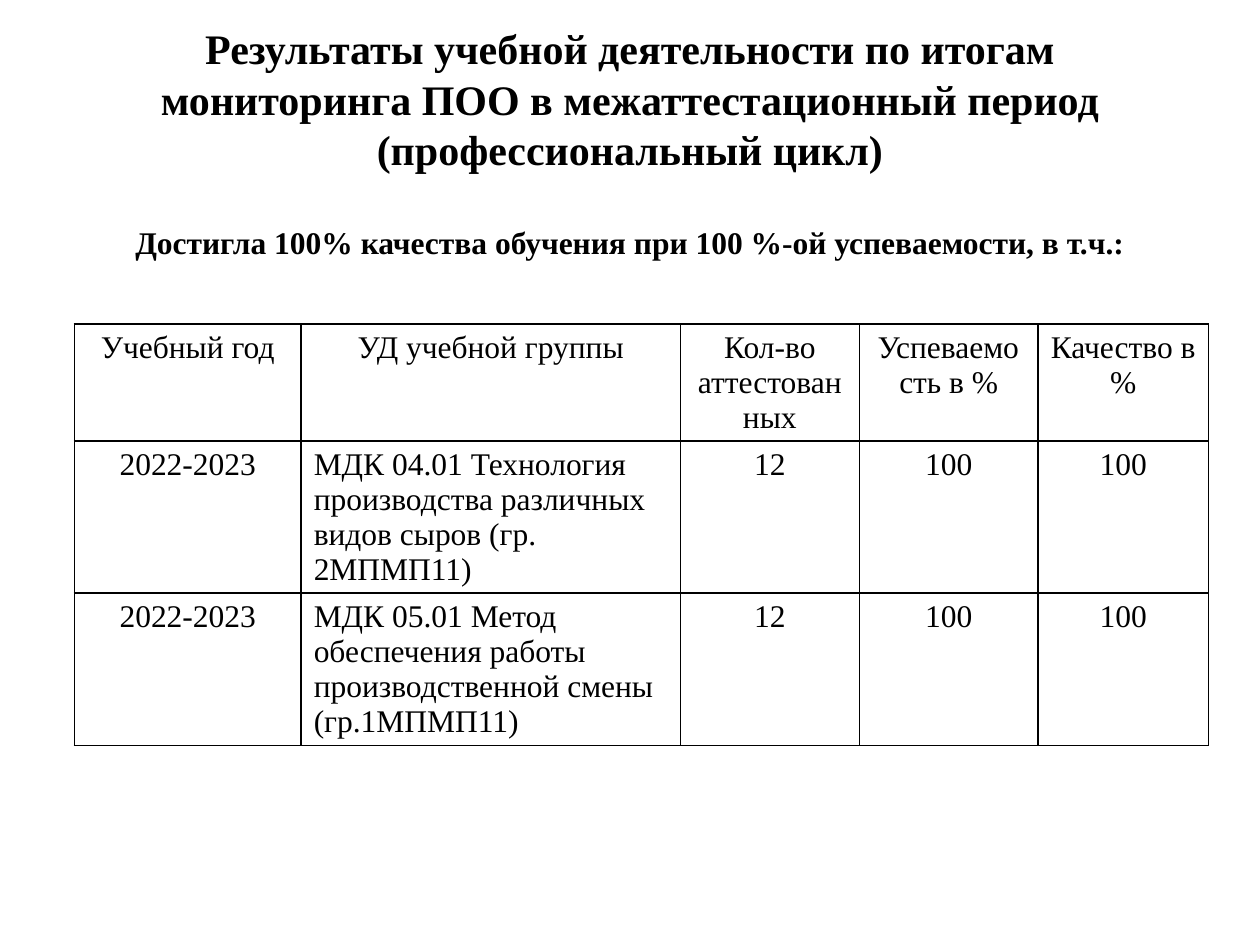
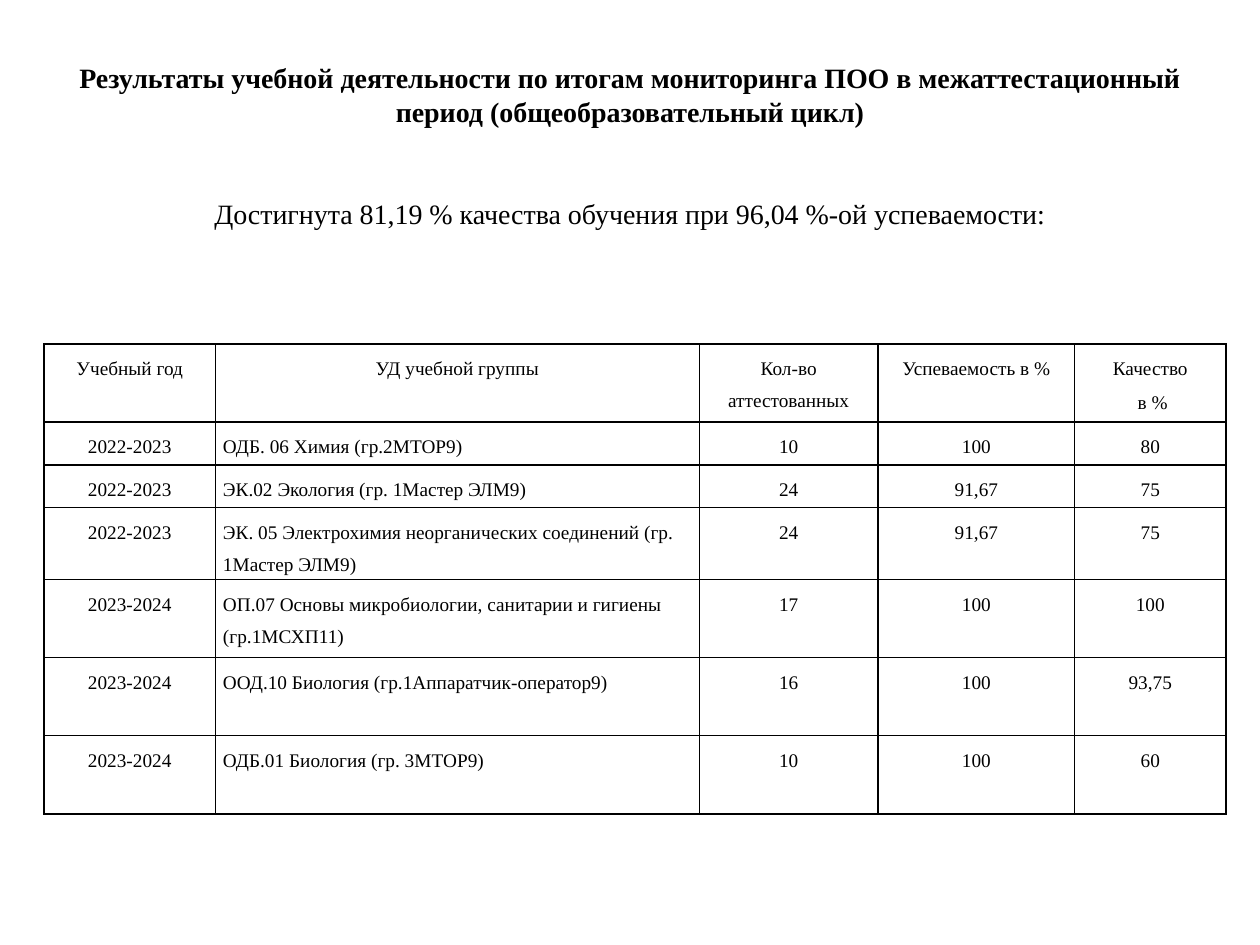
"""Builds two slides of study results, each with a title and a bordered table."""
import pptx
import pptx.dml.color
import pptx.enum.text
import pptx.oxml
import pptx.oxml.ns
import pptx.util

Inches, Pt = pptx.util.Inches, pptx.util.Pt
ALIGN = pptx.enum.text.PP_ALIGN
BLACK = pptx.dml.color.RGBColor(0, 0, 0)
FONT = "Times New Roman"
TITLE = "Результаты учебной деятельности по итогам мониторинга ПОО в межаттестационный период "
SUBJECT_COL = 1

SLIDES = [
    {
        "cycle": "(профессиональный цикл)",
        "summary": "Достигла 100% качества обучения при 100 %-ой успеваемости, в т.ч.:",
        "title_box": (0.5, 0, 9, 2.25),
        "title_size": 24, "summary_size": 18, "summary_bold": True, "gap": 28,
        "table_at": (0.59, 2.57),
        "cols": [1.8, 3.01, 1.42, 1.42, 1.35],
        "heights": [0.92, 1.2, 1.2],
        "insets": (0.1, 0.05),
        "cell_format": {"size": 18},
        "rows": [
            ("Учебный год", "УД учебной группы", "Кол-во аттестованных", "Успеваемость в %", "Качество в %"),
            ("2022-2023", "МДК 04.01 Технология производства различных видов сыров (гр. 2МПМП11)", "12", "100", "100"),
            ("2022-2023", "МДК 05.01 Метод обеспечения работы производственной смены (гр.1МПМП11)", "12", "100", "100"),
        ],
    },
    {
        "cycle": "(общеобразовательный цикл)",
        "summary": "Достигнута 81,19 % качества обучения при 96,04 %-ой успеваемости:",
        "title_box": (0.5, 0.13, 9, 2.05),
        "title_size": 16, "summary_size": 16, "summary_bold": False, "gap": 39,
        "table_at": (0.35, 2.73),
        "cols": [1.36, 3.84, 1.42, 1.56, 1.2],
        "heights": [0.62, 0.34, 0.34, 0.57, 0.62, 0.62, 0.62],
        "insets": (0.06, 0.03),
        "cell_format": {"size": 11, "spacing": 1.5, "before": 1.2},
        "rows": [
            ("Учебный год", "УД учебной группы", "Кол-во аттестованных", "Успеваемость в %", "Качество\n в %"),
            ("2022-2023", "ОДБ. 06 Химия (гр.2МТОР9)", "10", "100", "80"),
            ("2022-2023", "ЭК.02 Экология (гр. 1Мастер ЭЛМ9)", "24", "91,67", "75"),
            ("2022-2023", "ЭК. 05 Электрохимия неорганических соединений (гр. 1Мастер ЭЛМ9)", "24", "91,67", "75"),
            ("2023-2024", "ОП.07 Основы микробиологии, санитарии и гигиены (гр.1МСХП11)", "17", "100", "100"),
            ("2023-2024", "ООД.10 Биология (гр.1Аппаратчик-оператор9)", "16", "100", "93,75"),
            ("2023-2024", "ОДБ.01 Биология (гр. 3МТОР9)", "10", "100", "60"),
        ],
    },
]


def add_text(tf, text, size, bold=False, align=ALIGN.CENTER, spacing=1.0, before=0):
    for line in text.split("\n"):
        first = not tf.text
        p = tf.paragraphs[0] if first else tf.add_paragraph()
        p.alignment = align
        p.line_spacing = spacing
        p.space_before = Pt(0 if first else before)
        r = p.add_run()
        r.text = line
        r.font.name, r.font.size, r.font.bold = FONT, Pt(size), bold
        r.font.color.rgb = BLACK


def add_borders(cell):
    tcPr = cell._tc.get_or_add_tcPr()
    for i, side in enumerate(("lnL", "lnR", "lnT", "lnB")):
        tcPr.insert(i, pptx.oxml.parse_xml(
            f'<a:{side} {pptx.oxml.ns.nsdecls("a")} w="{Pt(1)}"><a:solidFill>'
            f'<a:srgbClr val="{BLACK}"/></a:solidFill></a:{side}>'))


def add_title(s, data):
    sp = s.shapes.title
    sp.left, sp.top, sp.width, sp.height = map(Inches, data["title_box"])
    tf = sp.text_frame
    tf.word_wrap = True
    tf.auto_size = pptx.enum.text.MSO_AUTO_SIZE.NONE
    tf.vertical_anchor = pptx.enum.text.MSO_ANCHOR.MIDDLE
    add_text(tf, TITLE + data["cycle"], data["title_size"], bold=True)
    add_text(tf, data["summary"], data["summary_size"], bold=data["summary_bold"], before=data["gap"])


def add_results(s, data):
    rows, cols, heights = data["rows"], data["cols"], data["heights"]
    size = map(Inches, (*data["table_at"], sum(cols), sum(heights)))
    table = s.shapes.add_table(len(rows), len(cols), *size).table
    table.first_row = table.horz_banding = False
    for col, width in zip(table.columns, cols):
        col.width = Inches(width)
    side, edge = map(Inches, data["insets"])
    for i, (values, height) in enumerate(zip(rows, heights)):
        table.rows[i].height = Inches(height)
        for j, value in enumerate(values):
            cell = table.cell(i, j)
            cell.margin_left = cell.margin_right = side
            cell.margin_top = cell.margin_bottom = edge
            cell.fill.background()
            add_borders(cell)
            align = ALIGN.LEFT if i and j == SUBJECT_COL else ALIGN.CENTER
            add_text(cell.text_frame, value, align=align, **data["cell_format"])


def main():
    prs = pptx.Presentation()
    prs.slide_width, prs.slide_height = Inches(10), Inches(7.5)
    for data in SLIDES:
        s = prs.slides.add_slide(prs.slide_layouts[5])
        add_title(s, data)
        add_results(s, data)
    prs.save("out.pptx")


if __name__ == "__main__":
    main()
